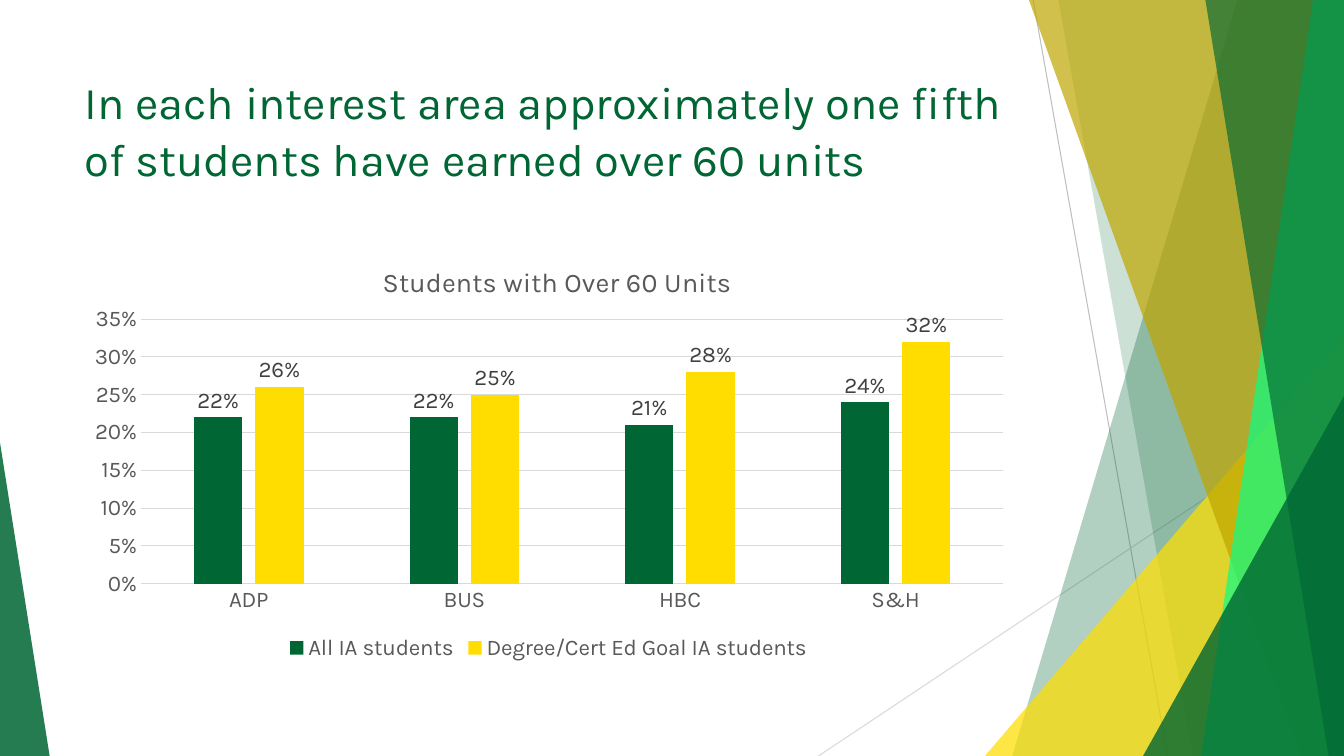
import pptx
import pptx.chart.data
import pptx.dml.color
import pptx.enum.chart
import pptx.enum.shapes
import pptx.enum.text
import pptx.oxml.ns
import pptx.oxml.xmlchemy
import pptx.util
from dataclasses import dataclass

Pt = pptx.util.Pt
qn = pptx.oxml.ns.qn
new_element = pptx.oxml.xmlchemy.OxmlElement
CHART = pptx.enum.chart


@dataclass(frozen=True)
class Theme:
    font: str = "Karla"
    green: str = "006633"
    yellow: str = "FFDD00"
    olive: str = "BFA600"
    mint: str = "0AFF85"
    dark_text: str = "404040"
    gray_text: str = "595959"
    gray_line: str = "BFBFBF"
    pale_line: str = "D9D9D9"
    heading_size: float = 32.4
    chart_title_size: float = 19.2
    chart_size: float = 16
    line_width: float = 0.75


THEME = Theme()
PAGE_WIDTH, PAGE_HEIGHT = 960, 540
CATEGORIES = ["ADP", "BUS", "HBC", "S&H"]
SERIES = [
    ("All IA students", [0.22, 0.22, 0.21, 0.24], THEME.green),
    ("Degree/Cert Ed Goal IA students", [0.26, 0.25, 0.28, 0.32], THEME.yellow),
]


def rgb(color):
    return pptx.dml.color.RGBColor.from_string(color)


def set_values(target, values):
    for name, value in values.items():
        setattr(target, name, value)


def style_font(font, size, color):
    set_values(font, {"name": THEME.font, "size": Pt(size), "bold": False})
    font.color.rgb = rgb(color)


def style_line(line, color):
    line.color.rgb = rgb(color)
    line.width = Pt(THEME.line_width)


def paint(shape, color, opacity):
    shape.shadow.inherit = False
    shape.line.fill.background()
    shape.fill.solid()
    shape.fill.fore_color.rgb = rgb(color)
    color_element = shape._element.spPr.find(qn("a:solidFill"))[0]
    alpha = new_element("a:alpha")
    alpha.set("val", str(opacity * 1000))
    color_element.append(alpha)


def add_thin_line(page, start, end, color):
    line = page.shapes.add_connector(
        pptx.enum.shapes.MSO_CONNECTOR.STRAIGHT, *map(Pt, start + end))
    style_line(line.line, color)
    line._element.spPr.append(new_element("a:effectLst"))


def add_band(page, top_left, bottom_left, color, opacity):
    builder = page.shapes.build_freeform(Pt(top_left), Pt(0))
    corners = [(PAGE_WIDTH, 0), (PAGE_WIDTH, PAGE_HEIGHT), (bottom_left, PAGE_HEIGHT)]
    builder.add_line_segments([(Pt(x), Pt(y)) for x, y in corners], close=True)
    paint(builder.convert_to_shape(), color, opacity)


def add_corner(page, left, top, width, apex, color, opacity):
    triangle = page.shapes.add_shape(
        pptx.enum.shapes.MSO_SHAPE.ISOSCELES_TRIANGLE,
        Pt(left), Pt(top), Pt(width), Pt(PAGE_HEIGHT - top))
    triangle.adjustments[0] = apex
    paint(triangle, color, opacity)


def add_right_corner(page, left, top, color, opacity):
    add_corner(page, left, top, PAGE_WIDTH - left, 1, color, opacity)


def add_heading(page, text):
    box = page.shapes.add_textbox(Pt(53.3), Pt(48), Pt(677), Pt(104))
    set_values(box.text_frame, {
        "word_wrap": True,
        "vertical_anchor": pptx.enum.text.MSO_ANCHOR.TOP,
    })
    para = box.text_frame.paragraphs[0]
    para.line_spacing = 1.04
    span = para.add_run()
    span.text = text
    style_font(span.font, THEME.heading_size, THEME.green)


def place(element, index, **fractions):
    for old in element.findall(qn("c:layout")):
        element.remove(old)
    layout = new_element("c:layout")
    manual = new_element("c:manualLayout")
    layout.append(manual)
    settings = {"xMode": "edge", "yMode": "edge", **fractions}
    if "w" in fractions:
        settings = {"layoutTarget": "inner", **settings}
    for name, value in settings.items():
        setting = new_element(f"c:{name}")
        setting.set("val", str(value))
        manual.append(setting)
    element.insert(index, layout)


def style_axes(chart):
    for axis in (chart.category_axis, chart.value_axis):
        set_values(axis, {
            "major_tick_mark": CHART.XL_TICK_MARK.NONE,
            "minor_tick_mark": CHART.XL_TICK_MARK.NONE,
        })
        style_font(axis.tick_labels.font, THEME.chart_size, THEME.gray_text)
    style_line(chart.category_axis.format.line, THEME.pale_line)
    values = chart.value_axis
    set_values(values, {"minimum_scale": 0, "maximum_scale": 0.35, "major_unit": 0.05})
    set_values(values.tick_labels, {"number_format": "0%", "number_format_is_linked": False})
    values.format.line.fill.background()
    style_line(values.major_gridlines.format.line, THEME.pale_line)


def style_series(series, color):
    series.format.fill.solid()
    series.format.fill.fore_color.rgb = rgb(color)
    labels = series.data_labels
    set_values(labels, {
        "show_value": True,
        "number_format": "0%",
        "number_format_is_linked": False,
        "position": CHART.XL_LABEL_POSITION.OUTSIDE_END,
    })
    style_font(labels.font, THEME.chart_size, THEME.dark_text)


def add_units_chart(page, title):
    data = pptx.chart.data.CategoryChartData(number_format="0%")
    data.categories = CATEGORIES
    for name, values, _ in SERIES:
        data.add_series(name, values)
    chart = page.shapes.add_chart(
        CHART.XL_CHART_TYPE.COLUMN_CLUSTERED,
        Pt(53.3), Pt(170), Pt(677), Pt(305), data).chart
    style_font(chart.font, THEME.chart_size, THEME.gray_text)
    set_values(chart, {"has_title": True, "has_legend": True})
    span = chart.chart_title.text_frame.paragraphs[0].add_run()
    span.text = title
    style_font(span.font, THEME.chart_title_size, THEME.gray_text)
    place(chart.chart_title._element, 1, x=0.32, y=0.05)
    place(chart._chartSpace.chart.plotArea, 0, x=0.07, y=0.19, w=0.91, h=0.62)
    set_values(chart.legend, {
        "position": CHART.XL_LEGEND_POSITION.BOTTOM,
        "include_in_layout": False,
    })
    style_font(chart.legend.font, THEME.chart_size, THEME.gray_text)
    style_axes(chart)
    plot = chart.plots[0]
    set_values(plot, {"gap_width": 219, "overlap": -27, "vary_by_categories": False})
    for series, (_, _, color) in zip(plot.series, SERIES):
        style_series(series, color)


def add_facets(page):
    add_thin_line(page, (738, 0), (834, PAGE_HEIGHT), THEME.gray_line)
    add_thin_line(page, (PAGE_WIDTH, 290), (584.6, PAGE_HEIGHT), THEME.pale_line)
    add_band(page, 884, 723, THEME.green, 30)
    add_band(page, 756, 852, THEME.green, 20)
    add_right_corner(page, 703.5, 240, THEME.yellow, 72)
    add_band(page, 735, 929.5, THEME.olive, 70)
    add_band(page, 938, 858, THEME.mint, 70)
    add_band(page, 861, 949, THEME.green, 65)
    add_right_corner(page, 816.5, 283, THEME.green, 80)
    add_corner(page, 0, 316, 35.5, 0, THEME.green, 85)


def main():
    deck = pptx.Presentation()
    set_values(deck, {"slide_width": Pt(PAGE_WIDTH), "slide_height": Pt(PAGE_HEIGHT)})
    page = deck.slides.add_slide(deck.slide_layouts[6])
    add_facets(page)
    add_heading(page, "In each interest area approximately one fifth of students have earned over 60 units")
    add_units_chart(page, "Students with Over 60 Units")
    deck.save("out.pptx")


if __name__ == "__main__":
    main()
